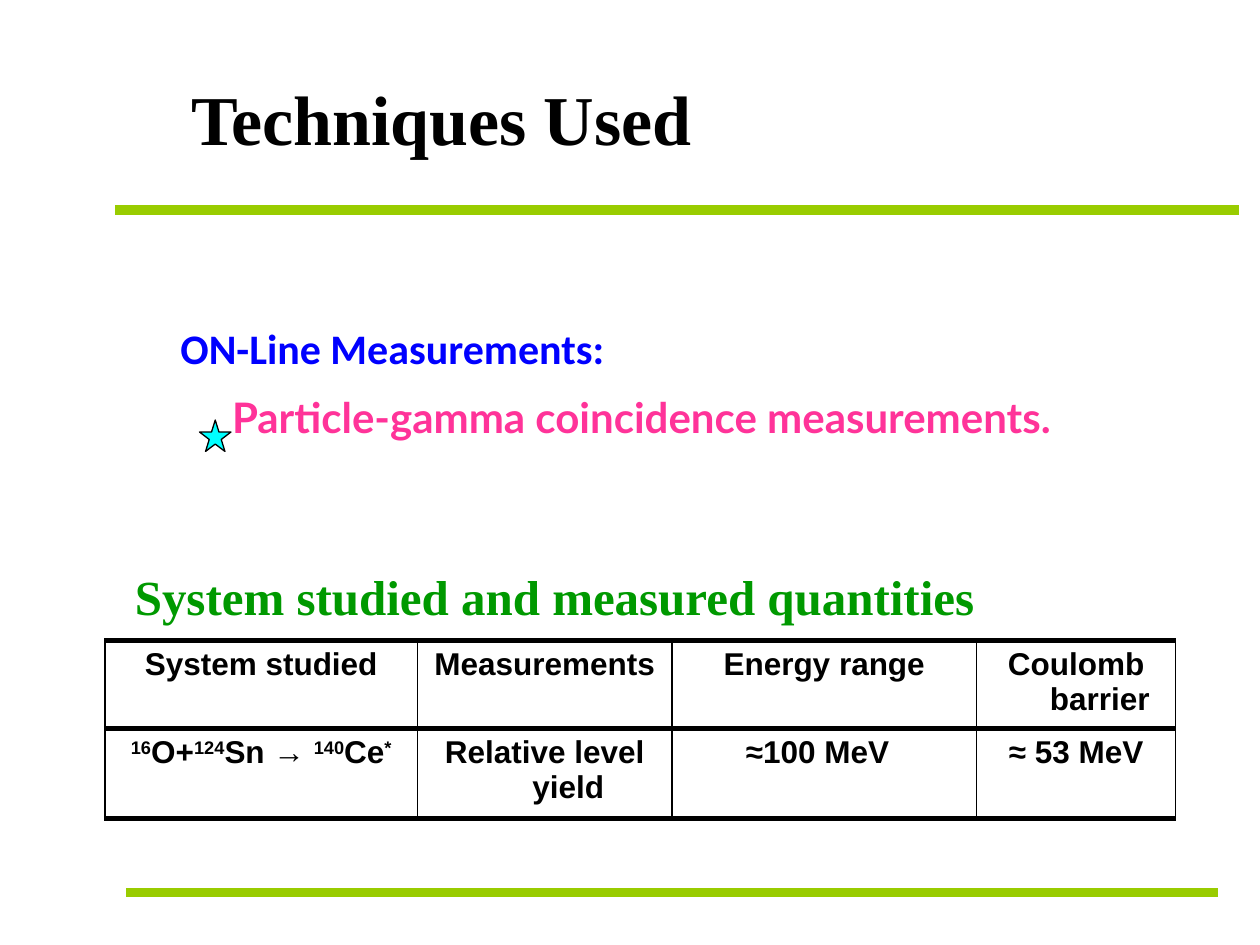
from pptx import Presentation
from pptx.dml.color import RGBColor
from pptx.enum.shapes import MSO_CONNECTOR as Conn, MSO_SHAPE as Kind
from pptx.enum.text import MSO_ANCHOR as Anchor, PP_ALIGN as Align
from pptx.oxml.ns import qn
from pptx.util import Pt
from lxml.etree import SubElement as Sub

BLACK = "000000"
LIME = "99CC00"
SERIF = "Times New Roman"
COLS = [178.5, 145.5, 174, 114]
ROWS = [50.3, 51.2]
HEADS = ["System studied", "Measurements", "Energy range", "Coulomb barrier"]
# Pairs of text and whether it is raised
SYSTEM = [("16", True), ("O+", False), ("124", True), ("Sn → ", False),
          ("140", True), ("Ce", False), ("*", True)]
VALUES = [None, "Relative level yield", "≈100 MeV", "≈ 53 MeV"]


def rgb(code):
    return RGBColor.from_string(code)


def style(para, name, size, color=BLACK):
    for run in para.runs:
        font = run.font
        font.name, font.size, font.bold = name, Pt(size), True
        font.color.rgb = rgb(color)


def indent(para, left, first=0):
    props = para._p.get_or_add_pPr()
    props.set("marL", str(Pt(left)))
    props.set("indent", str(Pt(first)))


def add_title(slide, text):
    title = slide.shapes.title
    title.left, title.top, title.width, title.height = (
        Pt(102), Pt(39.5), Pt(504), Pt(55))
    frame = title.text_frame
    frame.text = text
    frame.vertical_anchor = Anchor.TOP
    para = frame.paragraphs[0]
    para.alignment = Align.LEFT
    style(para, SERIF, 40)


def add_text(slide, left, top, width, height, lines):
    """Each line is (text, font, size, colour, left indent)."""
    box = slide.shapes.add_textbox(Pt(left), Pt(top), Pt(width), Pt(height))
    frame = box.text_frame
    frame.word_wrap = True
    for i, (text, name, size, color, inset) in enumerate(lines):
        para = frame.add_paragraph() if i else frame.paragraphs[0]
        para.text = text
        indent(para, inset)
        if i:
            para.space_before = Pt(11)
        style(para, name, size, color)


def add_rule(slide, left, right, y):
    line = slide.shapes.add_connector(
        Conn.STRAIGHT, Pt(left), Pt(y), Pt(right), Pt(y))
    line.line.color.rgb = rgb(LIME)
    line.line.width = Pt(5.25)
    Sub(line._element.spPr, qn("a:effectLst"))


def add_star(slide, left, top, size):
    star = slide.shapes.add_shape(
        Kind.STAR_5_POINT, Pt(left), Pt(top), Pt(size), Pt(size))
    star.shadow.inherit = False
    star.fill.solid()
    star.fill.fore_color.rgb = rgb("00FFFF")
    star.line.color.rgb = rgb(BLACK)
    star.line.width = Pt(0.75)


def set_edges(cell):
    props = cell._tc.get_or_add_tcPr()
    for tag, width in (("lnL", 0.75), ("lnR", 0.75), ("lnT", 3), ("lnB", 3)):
        edge = Sub(props, qn(f"a:{tag}"), w=str(Pt(width)))
        Sub(Sub(edge, qn("a:solidFill")), qn("a:srgbClr"), val=BLACK)


def set_system(para):
    for text, raised in SYSTEM:
        run = para.add_run()
        run.text = text
        if raised:
            run.font._element.set("baseline", "30000")


def add_grid(slide, left, top):
    grid = slide.shapes.add_table(
        len(ROWS), len(COLS), Pt(left), Pt(top),
        Pt(sum(COLS)), Pt(sum(ROWS))).table
    for col, width in zip(grid.columns, COLS):
        col.width = Pt(width)
    for row, height, texts in zip(grid.rows, ROWS, (HEADS, VALUES)):
        row.height = Pt(height)
        for cell, text in zip(row.cells, texts):
            set_edges(cell)
            cell.fill.background()
            para = cell.text_frame.paragraphs[0]
            if text:
                para.text = text
            else:
                set_system(para)
            para.alignment = Align.CENTER
            indent(para, 27, -27)
            style(para, "Arial", 18)
    energy = grid.cell(1, 2).text_frame.paragraphs[0]
    energy.alignment = Align.LEFT
    indent(energy, 35)


def main():
    deck = Presentation()
    deck.slide_width, deck.slide_height = Pt(720), Pt(540)
    slide = deck.slides.add_slide(deck.slide_layouts[5])
    add_text(slide, 60, 180.5, 660, 80, [
        ("ON-Line Measurements:", "Calibri", 24, "0000FF", 36),
        ("Particle-gamma coincidence measurements.", "Lato", 24, "FF3399", 65.5),
    ])
    add_title(slide, "Techniques Used")
    add_rule(slide, 66, 708, 120)
    add_rule(slide, 72, 696, 510)
    add_star(slide, 114, 240, 18)
    add_text(slide, 70, 320, 584, 41, [
        ("System studied and measured quantities", SERIF, 28, "009900", 0)])
    add_grid(slide, 60, 366)
    deck.save("out.pptx")


if __name__ == "__main__":
    main()
